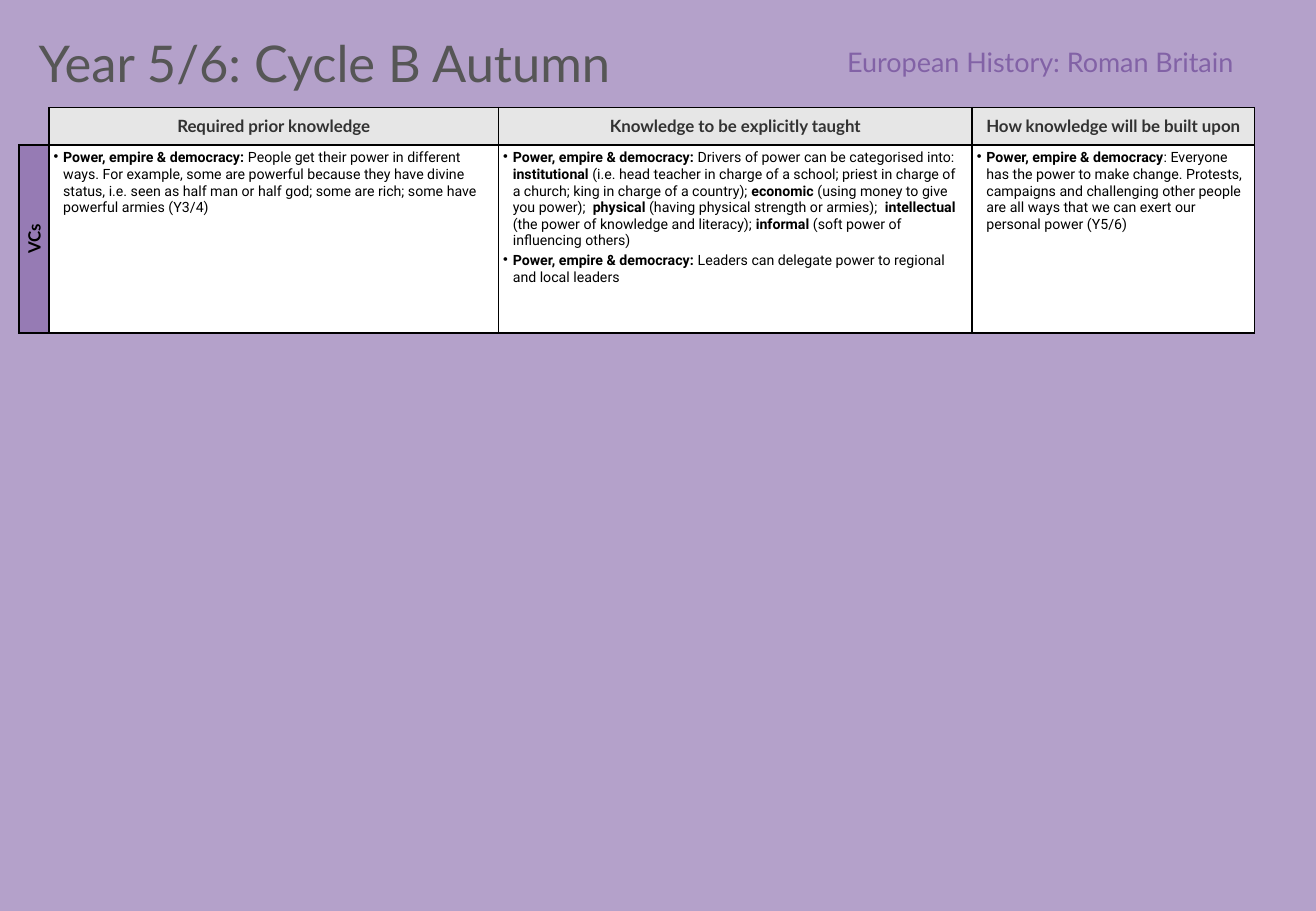
from dataclasses import dataclass

from lxml import etree
from pptx import Presentation
from pptx import util as u
from pptx.dml.color import RGBColor
from pptx.enum import text as t
from pptx.oxml.ns import qn
from pptx.slide import Slide
from pptx.table import Table, _Cell
from pptx.text.text import _Paragraph


@dataclass(frozen=True)
class Theme:
    background: str = "B4A1CA"
    accent: str = "8262A6"
    title: str = "565656"
    header: str = "323232"
    header_fill: str = "E6E6E6"
    body: str = "000000"
    body_fill: str = "FFFFFF"
    border: str = "000000"
    display_font: str = "Lato"
    body_font: str = "Roboto"
    title_size: float = 30
    topic_size: float = 16
    header_size: float = 10
    body_size: float = 8.4


THEME = Theme()


@dataclass(frozen=True)
class Style:
    font: str
    size: float
    color: str
    bold: bool = False


@dataclass(frozen=True)
class Heading:
    words: str
    left: float
    width: float
    align: t.PP_ALIGN
    style: Style


@dataclass(frozen=True)
class KnowledgeColumn:
    header: str
    width: float
    points: tuple[str, ...]  # ** marks the start and end of bold words


TITLE = Style(THEME.display_font, THEME.title_size, THEME.title)
TOPIC = Style(THEME.display_font, THEME.topic_size, THEME.accent)
HEADER = Style(THEME.display_font, THEME.header_size, THEME.header, True)
STRAND = Style(THEME.display_font, THEME.header_size, THEME.body, True)
BODY = Style(THEME.body_font, THEME.body_size, THEME.body)

HEADINGS = (
    Heading("Year 5/6: Cycle B Autumn", 0.56, 15.11, t.PP_ALIGN.LEFT, TITLE),
    Heading("European History: Roman Britain", 13.31, 12.73, t.PP_ALIGN.RIGHT, TOPIC),
)
COLUMNS = (
    KnowledgeColumn("Required prior knowledge", 9.4, (
        "**Power, empire & democracy: **People get their power in different ways. "
        "For example, some are powerful because they have divine status, i.e. seen as "
        "half man or half god; some are rich; some have powerful armies (Y3/4)",
    )),
    KnowledgeColumn("Knowledge to be explicitly taught", 9.9, (
        "**Power, empire & democracy: **Drivers of power can be categorised into: "
        "**institutional** (i.e. head teacher in charge of a school; priest in charge of "
        "a church; king in charge of a country); **economic** (using money to give you "
        "power);  **physical** (having physical strength or armies);  **intellectual** "
        "(the power of knowledge and literacy); **informal** (soft power of influencing "
        "others)",
        "**Power, empire & democracy: **Leaders can delegate power to regional and "
        "local leaders",
    )),
    KnowledgeColumn("How knowledge will be built upon", 5.9, (
        "**Power, empire & democracy**: Everyone has the power to make change. Protests, "
        "campaigns and challenging other people are all ways that we can exert our "
        "personal power (Y5/6)",
    )),
)
STRAND_WIDTH = 0.62
ROW_HEIGHTS = (0.78, 3.93)
CELL_MARGIN = u.Cm(0.1)
BULLET_INDENT = u.Cm(0.2)


def add_words(paragraph: _Paragraph, words: str, style: Style) -> None:
    """Add runs, switching bold at each ** mark."""
    for index, part in enumerate(words.split("**")):
        if part:
            font = paragraph.add_run().font
            paragraph.runs[-1].text = part
            formats = {"name": style.font, "size": u.Pt(style.size),
                       "bold": style.bold or index % 2 == 1}
            for name, value in formats.items():
                setattr(font, name, value)
            font.color.rgb = RGBColor.from_string(style.color)


def add_heading(slide: Slide, heading: Heading) -> None:
    frame = slide.shapes.add_textbox(u.Cm(heading.left), u.Cm(0.66),
                                     u.Cm(heading.width), u.Cm(1.27)).text_frame
    frame.word_wrap = True
    frame.vertical_anchor = t.MSO_ANCHOR.MIDDLE
    frame.paragraphs[0].alignment = heading.align
    add_words(frame.paragraphs[0], heading.words, heading.style)


def format_cell(cell: _Cell, fill: str | None, visible_sides: str = "LRTB") -> None:
    """Set margins, fill and the borders on the named sides."""
    for side in ("left", "right", "top", "bottom"):
        setattr(cell, f"margin_{side}", CELL_MARGIN)
    properties = cell._tc.get_or_add_tcPr()
    for side in "LRTB":
        line = etree.SubElement(properties, qn(f"a:ln{side}"), w=str(u.Pt(1)))
        if side in visible_sides:
            solid = etree.SubElement(line, qn("a:solidFill"))
            etree.SubElement(solid, qn("a:srgbClr"), val=THEME.border)
        else:
            etree.SubElement(line, qn("a:noFill"))
    if fill:
        cell.fill.solid()
        cell.fill.fore_color.rgb = RGBColor.from_string(fill)
    else:
        cell.fill.background()


def fill_label(cell: _Cell, words: str, style: Style) -> None:
    cell.vertical_anchor = t.MSO_ANCHOR.MIDDLE
    cell.text_frame.paragraphs[0].alignment = t.PP_ALIGN.CENTER
    add_words(cell.text_frame.paragraphs[0], words, style)


def fill_points(cell: _Cell, points: tuple[str, ...]) -> None:
    frame = cell.text_frame
    for index, point in enumerate(points):
        paragraph = frame.add_paragraph() if index else frame.paragraphs[0]
        paragraph.space_after = u.Pt(2)
        properties = paragraph._p.get_or_add_pPr()
        properties.set("marL", str(BULLET_INDENT))
        properties.set("indent", str(-BULLET_INDENT))
        etree.SubElement(properties, qn("a:buChar"), char="•")
        add_words(paragraph, point, BODY)


def fill_strand(table: Table) -> None:
    """Fill the first column: an open corner above the upright strand label."""
    corner, strand = table.cell(0, 0), table.cell(1, 0)
    format_cell(corner, None, "RB")
    etree.SubElement(corner.text_frame.paragraphs[0]._p, qn("a:endParaRPr"),
                     sz=str(THEME.header_size * 100))
    format_cell(strand, THEME.accent)
    fill_label(strand, "VCs", STRAND)
    properties = strand._tc.get_or_add_tcPr()
    properties.set("vert", "vert270")
    color = properties.find(f"{qn('a:solidFill')}/{qn('a:srgbClr')}")
    etree.SubElement(color, qn("a:alpha"), val="60000")


def add_knowledge_table(slide: Slide) -> None:
    widths = (STRAND_WIDTH, *(column.width for column in COLUMNS))
    table = slide.shapes.add_table(len(ROW_HEIGHTS), len(widths), u.Cm(0.4), u.Cm(2.25),
                                   u.Cm(sum(widths)), u.Cm(sum(ROW_HEIGHTS))).table
    table.first_row = table.horz_banding = False
    for column, width in zip(table.columns, widths):
        column.width = u.Cm(width)
    for row, height in zip(table.rows, ROW_HEIGHTS):
        row.height = u.Cm(height)
    fill_strand(table)
    for index, knowledge in enumerate(COLUMNS, start=1):
        header, body = table.cell(0, index), table.cell(1, index)
        format_cell(header, THEME.header_fill)
        fill_label(header, knowledge.header, HEADER)
        format_cell(body, THEME.body_fill)
        fill_points(body, knowledge.points)


def main() -> None:
    deck = Presentation()
    deck.slide_width, deck.slide_height = u.Cm(27.51), u.Cm(19.05)
    slide = deck.slides.add_slide(deck.slide_layouts[6])
    slide.background.fill.solid()
    slide.background.fill.fore_color.rgb = RGBColor.from_string(THEME.background)
    for heading in HEADINGS:
        add_heading(slide, heading)
    add_knowledge_table(slide)
    deck.save("out.pptx")


if __name__ == "__main__":
    main()
